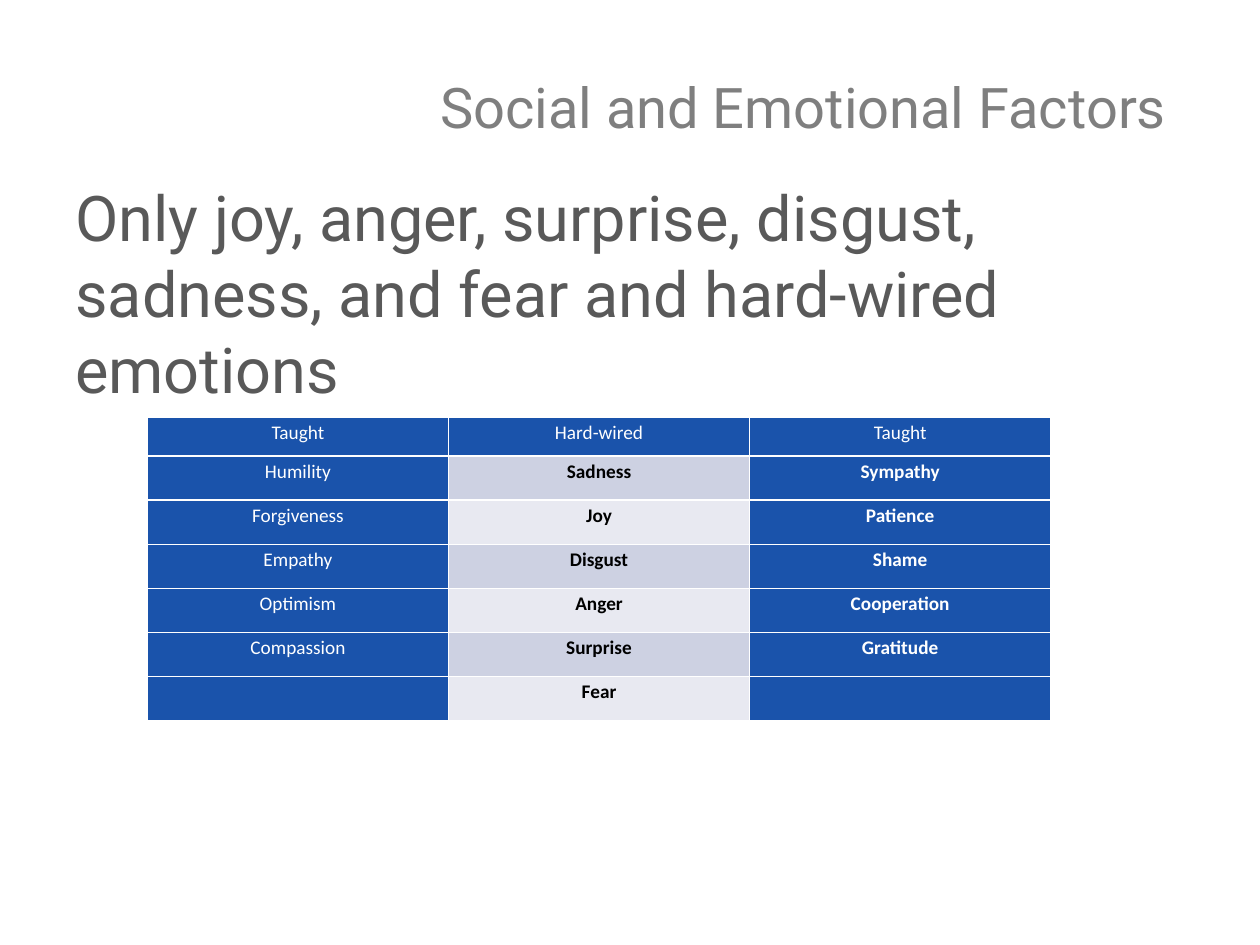
from dataclasses import dataclass

from lxml.etree import SubElement
from pptx import Presentation
from pptx.dml.color import RGBColor
from pptx.enum.text import MSO_ANCHOR, PP_ALIGN
from pptx.oxml.ns import qn
from pptx.util import Inches, Pt

WHITE = RGBColor(0xFF, 0xFF, 0xFF)
BLACK = RGBColor(0, 0, 0)
BLUE = RGBColor(0x1A, 0x53, 0xAB)
LAVENDER = RGBColor(0xCD, 0xD1, 0xE2)
PALE = RGBColor(0xE8, 0xE9, 0xF1)
TITLE_GRAY = RGBColor(0x7F, 0x7F, 0x7F)
BODY_GRAY = RGBColor(0x59, 0x59, 0x59)

HEADER_HEIGHT, ROW_HEIGHT = 0.31, 0.35
COLUMN_WIDTH = 2.39
EMOTIONS = [
    ("Taught", "Hard-wired", "Taught"),
    ("Humility", "Sadness", "Sympathy"),
    ("Forgiveness", "Joy", "Patience"),
    ("Empathy", "Disgust", "Shame"),
    ("Optimism", "Anger", "Cooperation"),
    ("Compassion", "Surprise", "Gratitude"),
    ("", "Fear", ""),
]


@dataclass
class TextBlock:
    text: str
    left: float
    top: float
    width: float
    height: float
    size: int
    color: RGBColor
    align: PP_ALIGN
    anchor: MSO_ANCHOR


BLOCKS = [
    TextBlock("Only joy, anger, surprise, disgust, sadness, and fear and hard-wired emotions",
              0.5, 1.37, 9, 4.95, 36, BODY_GRAY, PP_ALIGN.LEFT, MSO_ANCHOR.TOP),
    TextBlock("Social and Emotional Factors",
              0.5, 0.3, 8.86, 1.09, 32, TITLE_GRAY, PP_ALIGN.RIGHT, MSO_ANCHOR.MIDDLE),
]


def style_text(p, font: str, size: int, color: RGBColor, align: PP_ALIGN, bold: bool = False) -> None:
    p.alignment = align
    for r in p.runs:
        r.font.name = font
        r.font.size = Pt(size)
        r.font.bold = bold
        r.font.color.rgb = color


def add_block(s, block: TextBlock) -> None:
    sp = s.shapes.add_textbox(Inches(block.left), Inches(block.top),
                              Inches(block.width), Inches(block.height))
    tf = sp.text_frame
    tf.word_wrap = True
    tf.vertical_anchor = block.anchor
    tf.text = block.text
    style_text(tf.paragraphs[0], "Roboto", block.size, block.color, block.align)


def add_borders(cell, color: RGBColor, width: float) -> None:
    tc_pr = cell._tc.get_or_add_tcPr()
    for i, side in enumerate(("lnL", "lnR", "lnT", "lnB")):
        ln = tc_pr.makeelement(qn(f"a:{side}"), {"w": str(Pt(width))})
        fill = SubElement(ln, qn("a:solidFill"))
        SubElement(fill, qn("a:srgbClr"), val=str(color))
        tc_pr.insert(i, ln)


def style_cell(cell, text: str, row: int, col: int) -> None:
    hard_wired = row > 0 and col == 1
    cell.margin_left = cell.margin_right = Inches(0.07)
    cell.margin_top = cell.margin_bottom = 0
    cell.fill.solid()
    cell.fill.fore_color.rgb = (LAVENDER if row % 2 else PALE) if hard_wired else BLUE
    add_borders(cell, WHITE, 1)
    cell.text_frame.text = text
    p = cell.text_frame.paragraphs[0]
    p.line_spacing = 1.15
    style_text(p, "Calibri", 11, BLACK if hard_wired else WHITE,
               PP_ALIGN.CENTER, bold=row > 0 and col > 0)


def add_emotions_table(s) -> None:
    rows, cols = len(EMOTIONS), len(EMOTIONS[0])
    height = HEADER_HEIGHT + ROW_HEIGHT * (rows - 1)
    table = s.shapes.add_table(rows, cols, Inches(1.17), Inches(3.31),
                               Inches(COLUMN_WIDTH * cols), Inches(height)).table
    table.first_row = False
    table.horz_banding = False
    for column in table.columns:
        column.width = Inches(COLUMN_WIDTH)
    for i, words in enumerate(EMOTIONS):
        table.rows[i].height = Inches(ROW_HEIGHT if i else HEADER_HEIGHT)
        for j, word in enumerate(words):
            style_cell(table.cell(i, j), word, i, j)


def main() -> None:
    prs = Presentation()
    prs.slide_width, prs.slide_height = Inches(10), Inches(7.5)
    s = prs.slides.add_slide(prs.slide_layouts[6])
    for block in BLOCKS:
        add_block(s, block)
    add_emotions_table(s)
    prs.save("out.pptx")


if __name__ == "__main__":
    main()
